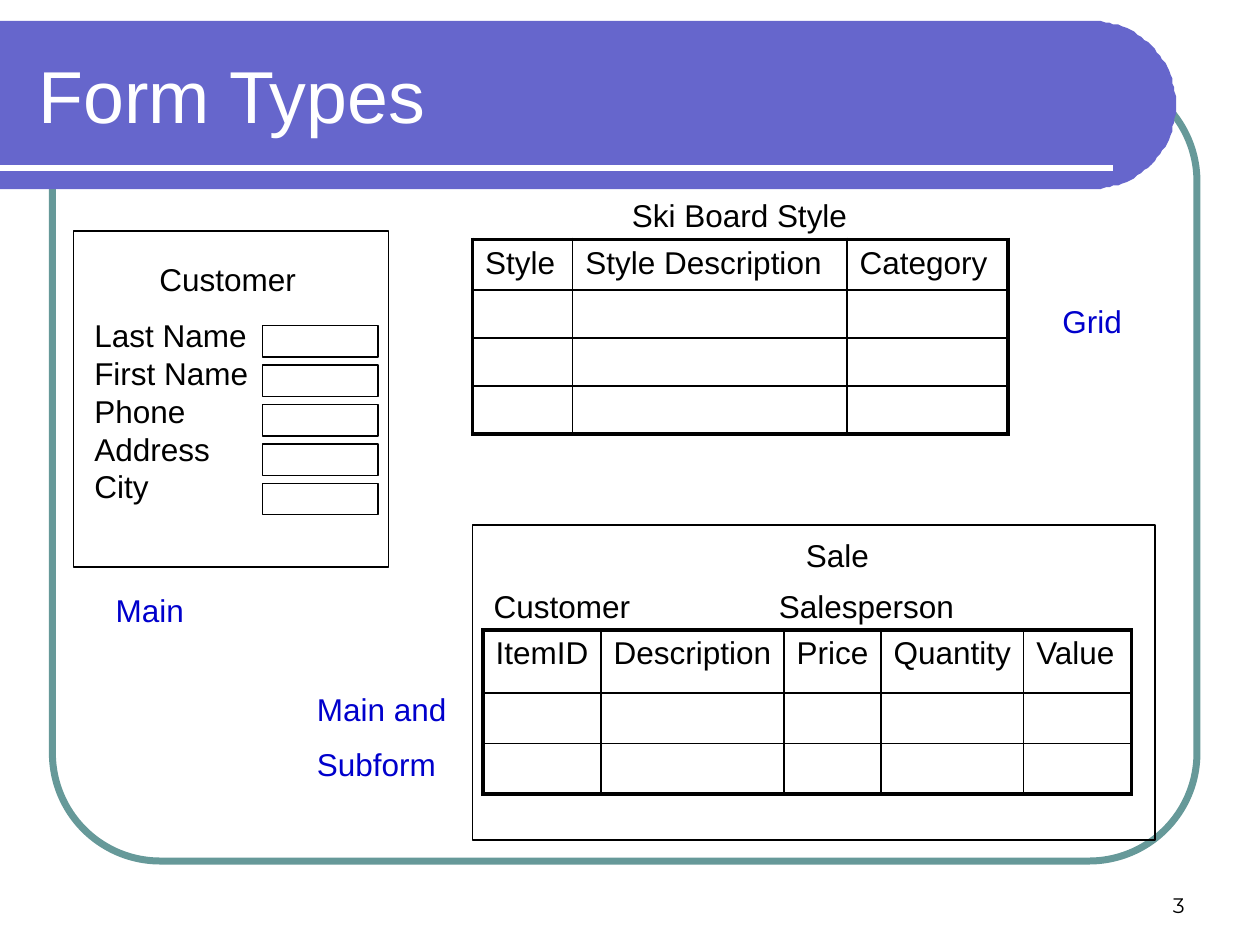
from collections import namedtuple
from math import cos, pi, sin

from pptx import Presentation
from pptx.dml.color import RGBColor as RGB
from pptx.enum.shapes import MSO_CONNECTOR as LINE, MSO_SHAPE as SHAPE
from pptx.enum.text import MSO_ANCHOR as ANCHOR, PP_ALIGN as ALIGN
from pptx.oxml import parse_xml
from pptx.oxml.ns import nsdecls
from pptx.util import Pt

Box = namedtuple("Box", "x y w h")
Theme = namedtuple("Theme", "ink white band frame label font num_font title body small")
THEME = Theme(ink="000000", white="FFFFFF", band="6666CC", frame="669999",
              label="0000CC", font="Arial", num_font="Montserrat",
              title=42, body=18, small=12)


def fill_text(frame, text, size=THEME.body, color=THEME.ink, font=THEME.font,
              align=ALIGN.LEFT, anchor=ANCHOR.TOP, gap=0, pitch=None):
    """Write lines of text into a frame with one format."""
    frame.word_wrap = True
    frame.vertical_anchor = anchor
    for i, line in enumerate(text.split("\n")):
        para = frame.add_paragraph() if i else frame.paragraphs[0]
        para.alignment = align
        para.space_before = Pt(gap if i else 0)
        if pitch:
            para.line_spacing = Pt(pitch)
        run = para.add_run()
        run.text = line
        run.font.size = Pt(size)
        run.font.name = font
        run.font.color.rgb = RGB.from_string(color)


def add_text(slide, box, text, **fmt):
    """Add a text box."""
    shape = slide.shapes.add_textbox(*map(Pt, box))
    fill_text(shape.text_frame, text, **fmt)


def add_rect(slide, box, color=THEME.ink, width=0.75, kind=SHAPE.RECTANGLE):
    """Add an unfilled outline and return it."""
    shape = slide.shapes.add_shape(kind, *map(Pt, box))
    shape.shadow.inherit = False
    shape.fill.background()
    shape.line.color.rgb = RGB.from_string(color)
    shape.line.width = Pt(width)
    return shape


def set_edges(cell, thick):
    """Rule the four cell sides, heavy where the side is in thick."""
    props = cell._tc.get_or_add_tcPr()
    for i, side in enumerate("LRTB"):
        width = Pt(2.25 if side in thick else 1)
        props.insert(i, parse_xml(
            f'<a:ln{side} {nsdecls("a")} w="{width}"><a:solidFill>'
            f'<a:srgbClr val="{THEME.ink}"/></a:solidFill></a:ln{side}>'))


def add_grid(slide, x, y, heads, widths, heights):
    """Add a table with a heavy border, a header row and blank rows."""
    rows, cols = len(heights), len(widths)
    table = slide.shapes.add_table(rows, cols, Pt(x), Pt(y), Pt(sum(widths)),
                                   Pt(sum(heights))).table
    table.first_row = table.horz_banding = False
    for col, width in zip(table.columns, widths):
        col.width = Pt(width)
    for r, height in enumerate(heights):
        table.rows[r].height = Pt(height)
        for c in range(cols):
            cell = table.cell(r, c)
            cell.fill.background()
            edges = {"T": r == 0, "B": r == rows - 1, "L": c == 0, "R": c == cols - 1}
            set_edges(cell, [side for side, outer in edges.items() if outer])
            if r == 0:
                fill_text(cell.text_frame, heads[c])
            else:
                cell.margin_top = cell.margin_bottom = 0


def add_frame(slide, box):
    """Draw the rounded frame behind the content."""
    shape = add_rect(slide, box, THEME.frame, 4, SHAPE.ROUNDED_RECTANGLE)
    shape.adjustments[0] = 0.137


def add_band(slide, box, title):
    """Draw the title band with its round end, rule and title."""
    rad = box.h / 2
    mid = box.x + box.w - rad
    arc = [(mid + rad * sin(pi * i / 60), box.y + rad - rad * cos(pi * i / 60))
           for i in range(61)]
    path = slide.shapes.build_freeform(box.x, box.y, scale=Pt(1))
    path.add_line_segments(arc + [(box.x, box.y + box.h)], close=True)
    band = path.convert_to_shape()
    band.shadow.inherit = False
    band.fill.solid()
    band.fill.fore_color.rgb = RGB.from_string(THEME.band)
    band.line.fill.background()
    y = box.y + 84
    rule = slide.shapes.add_connector(LINE.STRAIGHT, Pt(box.x), Pt(y),
                                      Pt(box.x + box.w - 36), Pt(y))
    rule.line.color.rgb = RGB.from_string(THEME.white)
    rule.line.width = Pt(3)
    rule._element.spPr.append(parse_xml(f'<a:effectLst {nsdecls("a")}/>'))
    add_text(slide, Box(box.x + 15, box.y + 6, 632, 72), title, size=THEME.title,
             color=THEME.white, anchor=ANCHOR.MIDDLE)


def add_main(slide, box):
    """Draw the main form: a heading, field names and entry boxes."""
    add_rect(slide, box)
    add_text(slide, Box(box.x + 42, box.y + 13, 100, 29), "Customer")
    names = ["Last Name", "First Name", "Phone", "Address", "City"]
    add_text(slide, Box(box.x + 4.8, box.y + 45.2, 110, 115), "\n".join(names),
             pitch=21.6)
    for i in range(len(names)):
        add_rect(slide, Box(box.x + 108, box.y + 54 + 22.55 * i, 66, 18))
    add_text(slide, Box(box.x + 17, box.y + 202, 70, 29), "Main", color=THEME.label)


def add_list(slide, box):
    """Draw the grid form with its heading and label."""
    add_text(slide, Box(box.x + 84, box.y - 28.5, 150, 29), "Ski Board Style")
    add_grid(slide, box.x, box.y, ["Style", "Style Description", "Category"],
             [57.3, 156.7, 92], [box.h / 4] * 4)
    add_text(slide, Box(box.x + 330, box.y + 32, 60, 29), "Grid", color=THEME.label)


def add_sale(slide, box):
    """Draw the main form that holds a subform table."""
    add_rect(slide, box)
    for x, y, text in [(183.5, 3, "Sale"), (5, 32, "Customer"), (168, 32, "Salesperson")]:
        add_text(slide, Box(box.x + x, box.y + y, 130, 29), text)
    add_grid(slide, box.x + 6, box.y + 60,
             ["ItemID", "Description", "Price", "Quantity", "Value"],
             [67.5, 104.5, 55.5, 81.5, 61.5], [36, 28.8, 28.8])
    add_text(slide, Box(box.x - 96, box.y + 91, 94, 61), "Main and\nSubform",
             color=THEME.label, gap=9.6)


def main():
    """Build and save the slide."""
    deck = Presentation()
    deck.slide_width, deck.slide_height = Pt(720), Pt(540)
    slide = deck.slides.add_slide(deck.slide_layouts[6])
    add_frame(slide, Box(30, 42, 654, 450))
    add_band(slide, Box(0, 12, 672, 96), "Form Types")
    add_text(slide, Box(516, 492, 168, 36), "3", size=THEME.small,
             font=THEME.num_font, align=ALIGN.RIGHT, anchor=ANCHOR.BOTTOM)
    add_main(slide, Box(42, 132, 180, 192))
    add_list(slide, Box(270, 136.8, 306, 110))
    add_sale(slide, Box(270, 300, 390, 180))
    deck.save("out.pptx")


if __name__ == "__main__":
    main()
